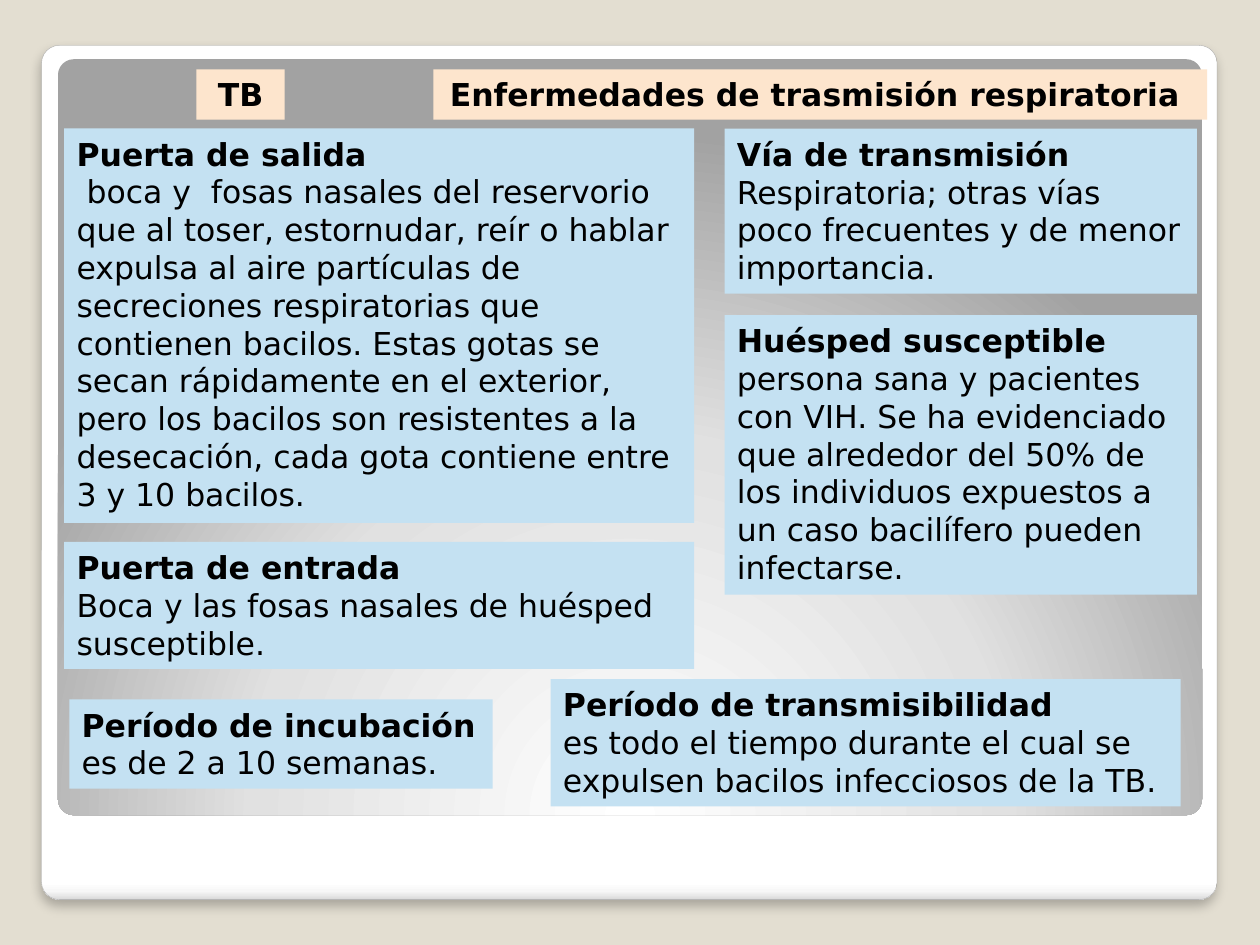
from lxml import etree
from pptx import Presentation
from pptx.dml.color import RGBColor
from pptx.enum.shapes import MSO_SHAPE
from pptx.enum.text import MSO_AUTO_SIZE, PP_ALIGN
from pptx.oxml import parse_xml
from pptx.oxml.ns import qn
from pptx.util import Inches, Pt

ROUNDED = MSO_SHAPE.ROUNDED_RECTANGLE
CENTER, LEFT = PP_ALIGN.CENTER, PP_ALIGN.LEFT
GROW = MSO_AUTO_SIZE.SHAPE_TO_FIT_TEXT
FONT = "DejaVu Sans"
A_NS = "http://schemas.openxmlformats.org/drawingml/2006/main"
BEIGE, PEACH, BLUE = "E3DED1", "FDE5CD", "C4E1F2"

LEFT_X, LEFT_W = 0.51, 5
RIGHT_X, RIGHT_W = 5.75, 3.75
HEADER_Y, HEADER_H = 0.55, 0.4
TOP_Y = 1.02

HEADERS = [
    ((3.44, HEADER_Y, 6.14, HEADER_H), "Enfermedades de trasmisión respiratoria "),
    ((1.56, HEADER_Y, 0.7, HEADER_H), "TB"),
]
TOPICS = [
    ((LEFT_X, TOP_Y, LEFT_W, 3.13), "Puerta de salida",
     " boca y  fosas nasales del reservorio que al toser, estornudar, reír o "
     "hablar expulsa al aire partículas de secreciones respiratorias que "
     "contienen bacilos. Estas gotas se secan rápidamente en el exterior, pero "
     "los bacilos son resistentes a la desecación, cada gota contiene entre "
     "3 y 10 bacilos."),
    ((RIGHT_X, TOP_Y, RIGHT_W, 1.31), "Vía de transmisión",
     "Respiratoria; otras vías poco frecuentes y de menor importancia."),
    ((RIGHT_X, 2.5, RIGHT_W, 2.22), "Huésped susceptible",
     "persona sana y pacientes con VIH. Se ha evidenciado que alrededor del 50% "
     "de los individuos expuestos a un caso bacilífero pueden infectarse."),
    ((LEFT_X, 4.3, LEFT_W, 1.01), "Puerta de entrada",
     "Boca y las fosas nasales de huésped susceptible."),
    ((4.37, 5.39, LEFT_W, 1.01), "Período de transmisibilidad",
     "es todo el tiempo durante el cual se expulsen bacilos infecciosos de la TB."),
    ((0.55, 5.55, 3.36, 0.71), "Período de incubación",
     "es de 2 a 10 semanas."),
]


def color(hex_value):
    return RGBColor.from_string(hex_value)


def add_panel(slide, box, stops, direction):
    """Rounded panel with a gradient; direction is the XML of its course."""
    panel = slide.shapes.add_shape(ROUNDED, *map(Inches, box))
    panel.adjustments[0] = 0.021
    panel.shadow.inherit = False
    panel.line.fill.background()
    panel.fill.background()
    stop_xml = "".join(
        f'<a:gs pos="{pos * 1000}"><a:srgbClr val="{value}"/></a:gs>'
        for pos, value in stops)
    gradient = parse_xml(
        f'<a:gradFill xmlns:a="{A_NS}" rotWithShape="1">'
        f'<a:gsLst>{stop_xml}</a:gsLst>{direction}</a:gradFill>')
    properties = panel.element.spPr
    properties.replace(properties.find(qn("a:noFill")), gradient)
    return panel


def add_soft_shadow(shape):
    effects = shape.element.spPr.find(qn("a:effectLst"))
    shadow = etree.SubElement(
        effects, qn("a:outerShdw"), blurRad=str(Pt(6)), dist=str(Pt(4)),
        dir="5400000", algn="tl", rotWithShape="0")
    tint = etree.SubElement(shadow, qn("a:srgbClr"), val="000000")
    etree.SubElement(tint, qn("a:alpha"), val="25000")


def add_backdrop(slide):
    """White card and the grey panel inside it."""
    card = add_panel(
        slide, (0.33, 0.36, 9.33, 6.78),
        [(0, "FFFFFF"), (98, "FFFFFF"), (99, "F7F7F7"), (100, "DADADA")],
        '<a:lin ang="5400000" scaled="0"/>')
    card.line.color.rgb = color("A4A4A4")
    card.line.width = Pt(0.16)
    add_soft_shadow(card)
    add_panel(
        slide, (0.46, 0.47, 9.08, 6),
        [(0, "FFFFFF"), (55, "E1E1E1"), (100, "A2A2A2")],
        '<a:path path="circle">'
        '<a:fillToRect l="50000" t="175000" r="50000" b="-75000"/></a:path>')


def add_label(slide, box, fill, heading, body=None, align=LEFT):
    """Filled text box: a bold heading and, below it, an optional body."""
    label = slide.shapes.add_textbox(*map(Inches, box))
    label.fill.solid()
    label.fill.fore_color.rgb = color(fill)
    frame = label.text_frame
    frame.word_wrap = True
    frame.auto_size = GROW
    frame.text = heading if body is None else f"{heading}\n{body}"
    for index, paragraph in enumerate(frame.paragraphs):
        paragraph.alignment = align
        paragraph.font.name = FONT
        paragraph.font.size = Pt(18)
        paragraph.font.bold = index == 0
        paragraph.font.color.rgb = color("000000")


def main():
    prs = Presentation()
    prs.slide_width, prs.slide_height = Inches(10), Inches(7.5)
    slide = prs.slides.add_slide(prs.slide_layouts[6])
    slide.background.fill.solid()
    slide.background.fill.fore_color.rgb = color(BEIGE)

    add_backdrop(slide)
    # Header labels
    for box, heading in HEADERS:
        add_label(slide, box, PEACH, heading, align=CENTER)
    # Topic boxes
    for box, heading, body in TOPICS:
        add_label(slide, box, BLUE, heading, body)

    prs.save("out.pptx")


if __name__ == "__main__":
    main()
